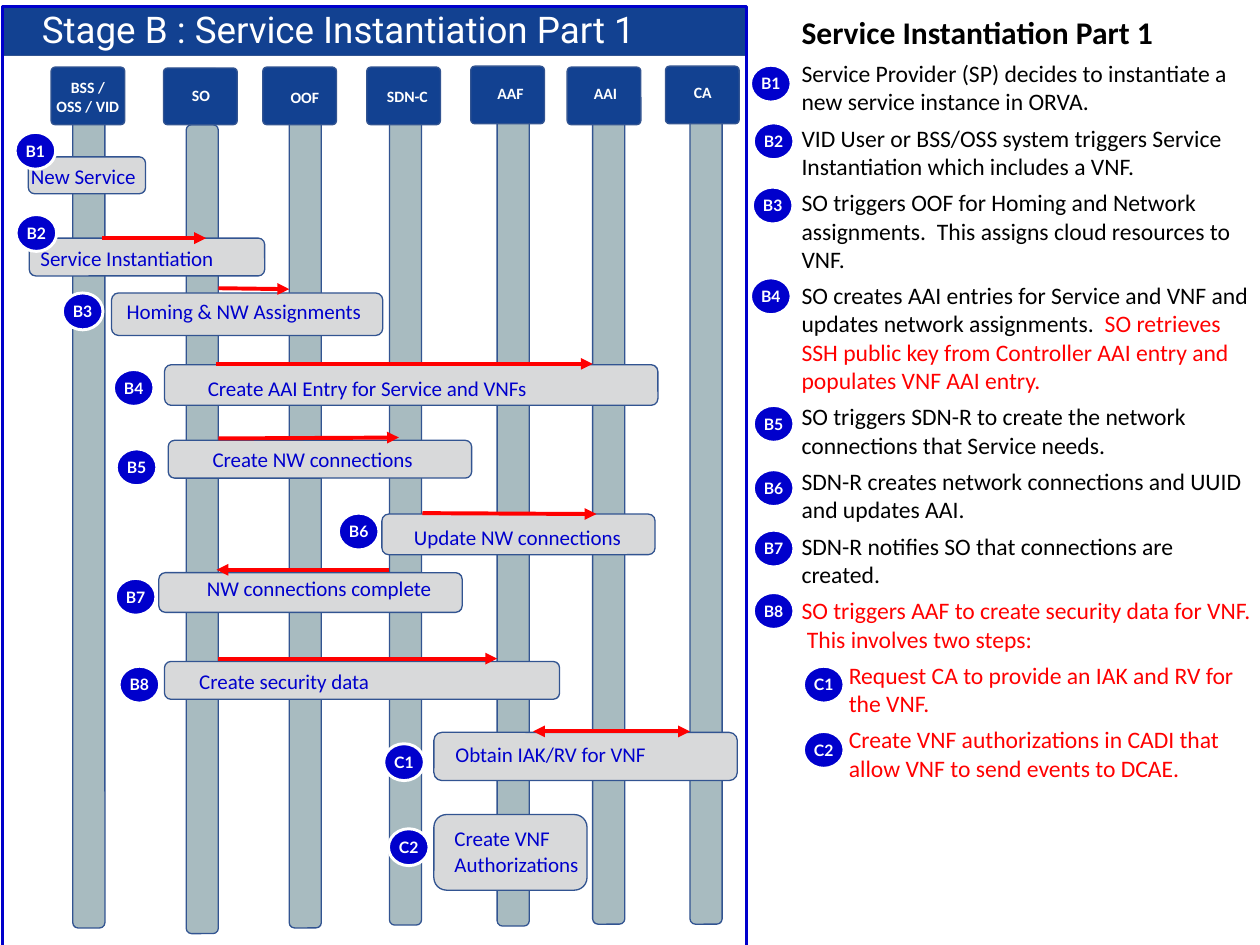
"""Build the service instantiation sequence slide with its numbered explanation."""
from dataclasses import dataclass, field

from pptx import Presentation
from pptx import util as u
from pptx.dml.color import RGBColor
from pptx.enum import shapes, text
from pptx.oxml.ns import qn
from lxml import etree

PX = 9144
MSO = shapes.MSO_SHAPE
CENTER = text.PP_ALIGN.CENTER


def style(font, size, color, bold=False):
    return {"font": font, "size": size, "color": color, "bold": bold}


@dataclass(frozen=True)
class Theme:
    navy: str = "124191"
    edge: str = "325491"
    blue: str = "0000CC"
    lane: str = "A8BBC0"
    bar: str = "D8D9DA"
    white: str = "FFFFFF"
    red: str = "FF0000"
    thin: float = 1
    medium: float = 2.25
    thick: float = 3
    title: dict = field(default_factory=lambda: style("Roboto", 28, "FFFFFF"))
    header: dict = field(default_factory=lambda: style("Calibri", 12, "FFFFFF", True))
    caption: dict = field(default_factory=lambda: style("Calibri", 16, "0000CC"))
    badge: dict = field(default_factory=lambda: style("Lato", 12, "FFFFFF", True))
    heading: dict = field(default_factory=lambda: style("Calibri", 24, "000000", True))
    body: dict = field(default_factory=lambda: style("Calibri", 18, "000000"))
    new: dict = field(default_factory=lambda: style("Calibri", 18, "FF0000"))


class Deck:
    def __init__(self, prs, theme):
        self.theme = theme
        self.s = prs.slides.add_slide(prs.slide_layouts[1])

    def run(self, p, words, fmt):
        r = p.add_run()
        r.text = words
        values = {"name": fmt["font"], "size": u.Pt(fmt["size"]), "bold": fmt["bold"]}
        for name, value in values.items():
            setattr(r.font, name, value)
        r.font.color.rgb = RGBColor.from_string(fmt["color"])

    def frame(self, tf, inset=None, **values):
        if inset is not None:
            sides = ("left", "top", "right", "bottom")
            values.update({f"margin_{side}": inset * PX for side in sides})
        for name, value in values.items():
            setattr(tf, name, value)

    def shape(self, kind, box, fill, line, width, radius=None):
        sp = self.s.shapes.add_shape(kind, *(v * PX for v in box))
        sp.shadow.inherit = False
        if fill:
            sp.fill.solid()
            sp.fill.fore_color.rgb = RGBColor.from_string(fill)
        else:
            sp.fill.background()
        sp.line.color.rgb = RGBColor.from_string(line)
        sp.line.width = u.Pt(width)
        if radius is not None:
            sp.adjustments[0] = radius
        return sp

    def rounded(self, box, fill, radius=None):
        return self.shape(MSO.ROUNDED_RECTANGLE, box, fill, self.theme.edge,
                          self.theme.thin, radius)

    def label(self, box, words, fmt, align=None, wrap=True):
        sp = self.s.shapes.add_textbox(*(v * PX for v in box))
        self.frame(sp.text_frame, word_wrap=wrap,
                   auto_size=text.MSO_AUTO_SIZE.SHAPE_TO_FIT_TEXT)
        p = sp.text_frame.paragraphs[0]
        p.alignment = align
        self.run(p, words, fmt)

    def badge(self, name, x, y):
        sp = self.shape(MSO.OVAL, (x, y, 43, 39), self.theme.blue,
                        self.theme.white, self.theme.medium)
        self.frame(sp.text_frame, 4, vertical_anchor=text.MSO_ANCHOR.MIDDLE)
        p = sp.text_frame.paragraphs[0]
        p.alignment = CENTER
        self.run(p, name, self.theme.badge)

    def arrow(self, ends, *points):
        sp = self.s.shapes.add_connector(shapes.MSO_CONNECTOR.STRAIGHT,
                                         *(v * PX for v in points))
        sp.line.color.rgb = RGBColor.from_string(self.theme.red)
        sp.line.width = u.Pt(self.theme.thick)
        for end in ends:
            etree.SubElement(sp.line._ln, qn(f"a:{end}")).set("type", "triangle")
        etree.SubElement(sp._element.spPr, qn("a:effectLst"))

    def placeholder(self, index, box, inset=None):
        sp = self.s.placeholders[index]
        for name, value in zip(("left", "top", "width", "height"), box):
            setattr(sp, name, value * PX)
        sp._element.getparent().append(sp._element)
        self.frame(sp.text_frame, inset, word_wrap=True,
                   vertical_anchor=text.MSO_ANCHOR.TOP,
                   auto_size=text.MSO_AUTO_SIZE.SHAPE_TO_FIT_TEXT)
        return sp.text_frame

    def title(self, box, words):
        p = self.placeholder(0, box).paragraphs[0]
        p.alignment = CENTER
        self.run(p, words, self.theme.title)

    def body(self, box, items):
        tf = self.placeholder(1, box, 8)
        for i, (level, runs) in enumerate(items):
            p = tf.add_paragraph() if i else tf.paragraphs[0]
            values = {"level": level, "space_before": u.Pt(0), "space_after": u.Pt(6)}
            for name, value in values.items():
                setattr(p, name, value)
            pPr = p._p.get_or_add_pPr()
            pPr.set("marL", str(level * 50 * PX))
            pPr.set("indent", "0")
            etree.SubElement(pPr, qn("a:buNone"))
            for words, fmt in runs:
                self.run(p, words, fmt)


def main():
    prs = Presentation()
    prs.slide_width, prs.slide_height = 1333 * PX, 1000 * PX
    t = Theme()
    d = Deck(prs, t)

    d.shape(MSO.RECTANGLE, (3, 7, 787, 52), t.navy, t.edge, t.thin)
    d.title((-8, 2, 732, 57), "Stage B : Service Instantiation Part 1")
    d.shape(MSO.RECTANGLE, (3, 7, 787, 999), None, t.blue, t.medium)

    actors = [
        ("BSS / OSS / VID", (77, 113, 869), (54, 71, 61), (46, 77, 94, 50)),
        ("SO", (197, 132, 856), (173, 72, 60), (193, 86, 39, 30)),
        ("OOF", (306, 126, 856), (278, 71, 61), (297, 88, 51, 30)),
        ("SDN-C", (412, 123, 856), (388, 71, 61), (399, 87, 64, 30)),
        ("AAF", (526, 124, 856), (498, 70, 61), (516, 84, 48, 30)),
        ("AAI", (627, 122, 856), (600, 71, 61), (618, 84, 45, 30)),
        ("CA", (730, 122, 856), (704, 70, 61), (724, 83, 39, 30)),
    ]
    for name, (x, y, h), (hx, hy, hh), box in actors:
        d.rounded((x, y, 34, h), t.lane)
        d.rounded((hx, hy, 78, hh), t.navy, 0.07)
        d.label(box, name, t.header, CENTER, wrap=" " in name)

    head, tail = "headEnd", "tailEnd"
    steps = [
        ("B1", (16, 140), (794, 69), (30, 166, 124, 39),
         "New Service", (23, 168, 137, 37), None),
        ("B2", (17, 227), (797, 130), (31, 252, 249, 40),
         "Service Instantiation", (33, 255, 238, 37), ([head], 218, 252, 108, 252)),
        ("B3", (66, 310), (796, 198), (118, 310, 287, 45),
         "Homing & NW Assignments", (124, 311, 282, 37), ([head], 306, 306, 231, 305)),
        ("B4", (120, 391), (794, 294), (174, 386, 522, 43),
         "Create AAI Entry for Service and VNFs", (210, 393, 381, 37),
         ([head], 627, 385, 229, 385)),
        ("B5", (123, 475), (797, 429), (178, 466, 321, 40),
         "Create NW connections", (215, 468, 248, 37), ([head], 422, 463, 231, 464)),
        ("B6", (358, 543), (797, 497), (404, 544, 289, 43),
         "Update NW connections", (428, 550, 249, 37), ([head], 631, 544, 447, 543)),
        ("B7", (122, 612), (797, 561), (168, 606, 321, 42),
         "NW connections complete", (209, 604, 274, 37), ([tail], 412, 603, 229, 603)),
        ("B8", (126, 705), (797, 627), (174, 700, 418, 40),
         "Create security data", (201, 703, 373, 37), ([head], 526, 697, 231, 697)),
        ("C1", (406, 787), (850, 705), (459, 775, 321, 51),
         "Obtain IAK/RV for VNF", (472, 780, 309, 37),
         ([head, tail], 730, 774, 564, 774)),
        ("C2", (411, 877), (850, 774), (459, 862, 162, 80),
         "Create VNF Authorizations", (471, 869, 156, 64), None),
    ]
    for name, spot, _, bar, words, box, arrow in steps:
        d.rounded(bar, t.bar)
        d.label(box, words, t.caption)
        d.badge(name, *spot)
        if arrow:
            d.arrow(*arrow)

    d.body((840, 6, 494, 837), [
        (0, [("Service Instantiation Part 1", t.heading)]),
        (0, [("Service Provider (SP) decides to instantiate a new service instance "
              "in ORVA.", t.body)]),
        (0, [("VID User or BSS/OSS system triggers Service Instantiation which "
              "includes a VNF.", t.body)]),
        (0, [("SO triggers OOF for Homing and Network assignments.  This assigns "
              "cloud resources to VNF.", t.body)]),
        (0, [("SO creates AAI entries for Service and VNF and updates network "
              "assignments.  ", t.body),
             ("SO retrieves SSH public key from Controller AAI entry and populates "
              "VNF AAI entry.", t.new)]),
        (0, [("SO triggers SDN-R to create the network connections that Service "
              "needs.", t.body)]),
        (0, [("SDN-R creates network connections and UUID and updates AAI.", t.body)]),
        (0, [("SDN-R notifies SO that connections are created.", t.body)]),
        (0, [("SO triggers AAF to create security data for VNF.  This involves two "
              "steps:", t.new)]),
        (1, [("Request CA to provide an IAK and RV for the VNF.", t.new)]),
        (1, [("Create VNF authorizations in CADI that allow VNF to send events to "
              "DCAE.", t.new)]),
    ])
    for name, _, spot, *_ in steps:
        d.badge(name, *spot)

    prs.save("out.pptx")


if __name__ == "__main__":
    main()
